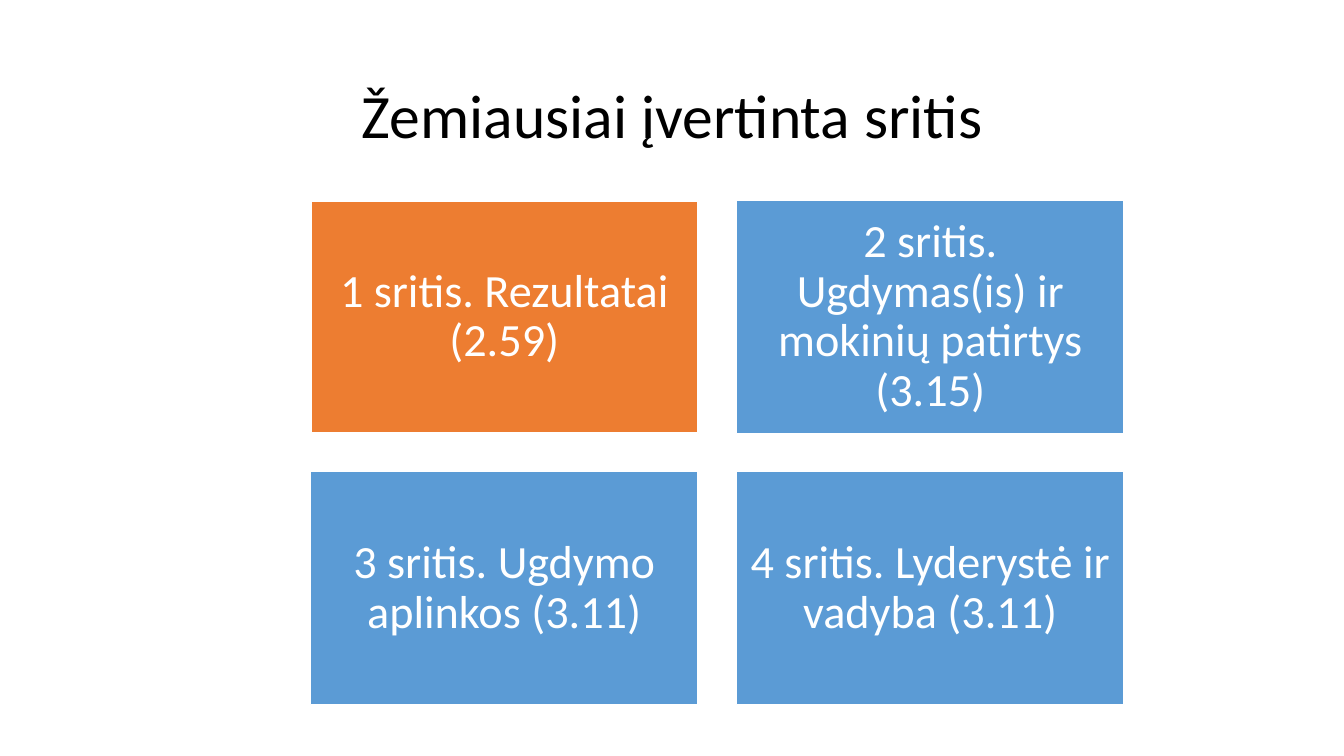
from dataclasses import dataclass

from pptx import Presentation
from pptx.dml.color import RGBColor
from pptx.enum.shapes import MSO_SHAPE
from pptx.enum.text import MSO_ANCHOR, PP_ALIGN
from pptx.util import Inches, Pt


@dataclass(frozen=True)
class Theme:
    font: str = "Calibri"
    title_size: float = 44
    tile_size: float = 33
    text: RGBColor = RGBColor(0x00, 0x00, 0x00)
    white: RGBColor = RGBColor(0xFF, 0xFF, 0xFF)
    regular: RGBColor = RGBColor(0x5B, 0x9B, 0xD5)
    lowest: RGBColor = RGBColor(0xED, 0x7D, 0x31)


@dataclass(frozen=True)
class Box:
    left: float
    top: float
    width: float
    height: float

    def cell(self, column, row, columns, rows, gap):
        """Box of one cell in an even grid with equal gaps."""
        width = (self.width - gap * (columns - 1)) / columns
        height = (self.height - gap * (rows - 1)) / rows
        return Box(self.left + column * (width + gap),
                   self.top + row * (height + gap), width, height)

    def lengths(self):
        return [Inches(value) for value in (self.left, self.top, self.width, self.height)]


THEME = Theme()
TITLE_BOX = Box(0.92, 0.4, 11.5, 1.45)
TILES_BOX = Box(3.08, 1.99, 8.07, 5.0)
COLUMNS, GAP = 2, 0.38
INSET = Inches(0.14)

AREAS = [
    "1 sritis. Rezultatai (2.59)",
    "2 sritis. Ugdymas(is) ir mokinių patirtys (3.15)",
    "3 sritis. Ugdymo aplinkos (3.11)",
    "4 sritis. Lyderystė ir vadyba (3.11)",
]
LOWEST_AREA = 0


def write(frame, text, size, color):
    frame.word_wrap = True
    frame.vertical_anchor = MSO_ANCHOR.MIDDLE
    para = frame.paragraphs[0]
    para.text = text
    para.alignment = PP_ALIGN.CENTER
    para.font.name = THEME.font
    para.font.size = Pt(size)
    para.font.color.rgb = color
    return para


def add_title(page, box, text):
    title = page.shapes.title
    title.left, title.top, title.width, title.height = box.lengths()
    write(title.text_frame, text, THEME.title_size, THEME.text)


def add_tile(page, box, text, is_lowest):
    tile = page.shapes.add_shape(MSO_SHAPE.RECTANGLE, *box.lengths())
    tile.shadow.inherit = False
    tile.fill.solid()
    tile.fill.fore_color.rgb = THEME.lowest if is_lowest else THEME.regular
    tile.line.color.rgb = THEME.white
    tile.line.width = Pt(1.5 if is_lowest else 1)
    frame = tile.text_frame
    frame.margin_left = frame.margin_right = INSET
    frame.margin_top = frame.margin_bottom = INSET
    write(frame, text, THEME.tile_size, THEME.white).line_spacing = 0.9


def add_tiles(page, box, areas):
    rows = -(-len(areas) // COLUMNS)
    for index, text in enumerate(areas):
        row, column = divmod(index, COLUMNS)
        cell = box.cell(column, row, COLUMNS, rows, GAP)
        add_tile(page, cell, text, index == LOWEST_AREA)


def main():
    deck = Presentation()
    deck.slide_width, deck.slide_height = Inches(13.33), Inches(7.5)
    page = deck.slides.add_slide(deck.slide_layouts[5])  # title only

    # Heading
    add_title(page, TITLE_BOX, "Žemiausiai įvertinta sritis")
    # Rated areas, the lowest one highlighted
    add_tiles(page, TILES_BOX, AREAS)

    deck.save("out.pptx")


if __name__ == "__main__":
    main()
